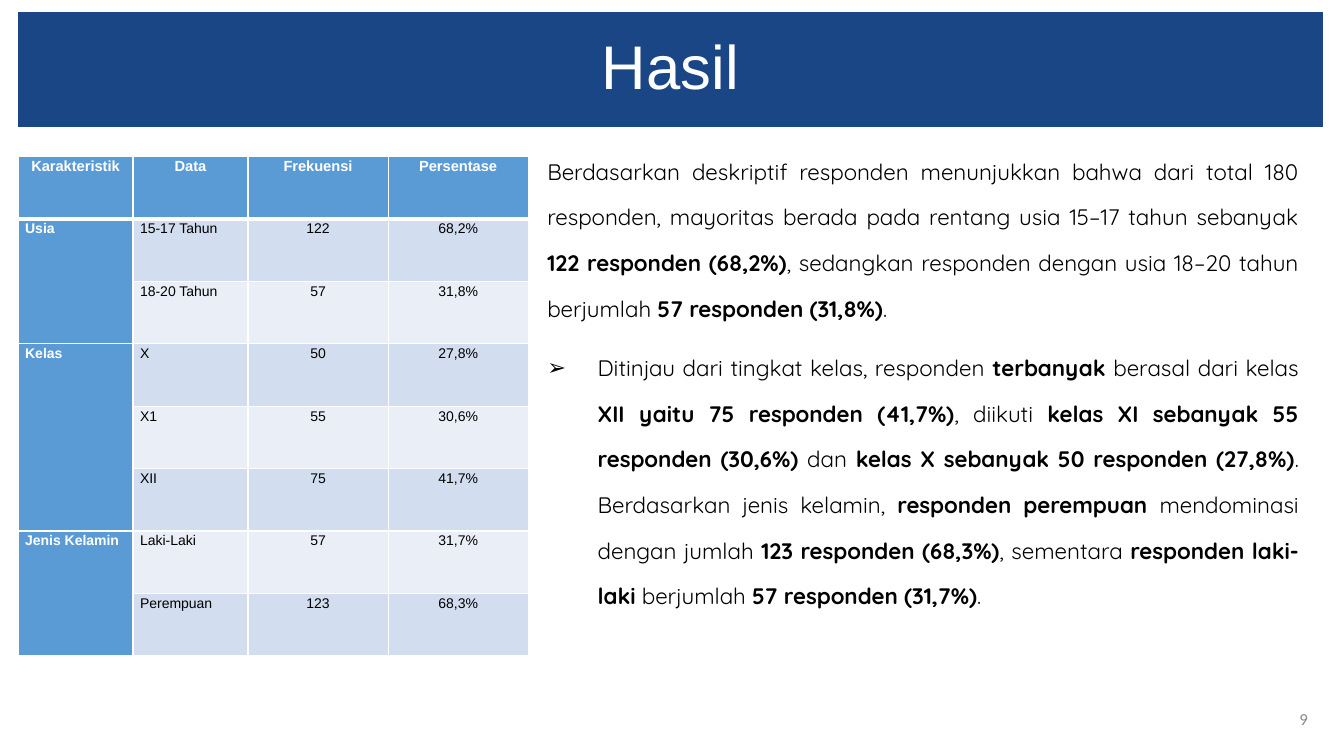
import pptx
import pptx.util
import pptx.dml.color
import pptx.enum.text
import pptx.oxml.ns
from lxml import etree
from pptx.util import Inches

COLORS = {
    "banner": "1B4685",
    "head": "5B9BD5",
    "odd": "D2DEEF",
    "even": "EAEFF7",
    "white": "FFFFFF",
    "black": "000000",
    "gray": "888888",
}
ALIGN = pptx.enum.text.PP_ALIGN
ANCHOR = pptx.enum.text.MSO_ANCHOR

COL_WIDTHS = [1.14, 1.14, 1.39, 1.39]
ROW_HEIGHT = 0.62
HEADER = ["Karakteristik", "Data", "Frekuensi", "Persentase"]
GROUPS = [
    ("Usia", [("15-17 Tahun", "122", "68,2%"), ("18-20 Tahun", "57", "31,8%")]),
    ("Kelas", [("X", "50", "27,8%"), ("X1", "55", "30,6%"), ("XII", "75", "41,7%")]),
    ("Jenis Kelamin", [("Laki-Laki", "57", "31,7%"), ("Perempuan", "123", "68,3%")]),
]
AGE_TEXT = (
    "Berdasarkan deskriptif responden menunjukkan bahwa dari total 180 responden, "
    "mayoritas berada pada rentang usia 15–17 tahun sebanyak **122 responden (68,2%)**, "
    "sedangkan responden dengan usia 18–20 tahun berjumlah **57 responden (31,8%)**."
)
CLASS_TEXT = (
    "Ditinjau dari tingkat kelas, responden **terbanyak** berasal dari kelas "
    "**XII yaitu 75 responden (41,7%)**, diikuti **kelas XI sebanyak 55 responden (30,6%)** "
    "dan **kelas X sebanyak 50 responden (27,8%)**. Berdasarkan jenis kelamin, "
    "**responden perempuan **mendominasi dengan jumlah **123 responden (68,3%)**, "
    "sementara **responden laki-laki **berjumlah **57 responden (31,7%)**."
)


def rgb(name):
    return pptx.dml.color.RGBColor.from_string(COLORS[name])


def add_text(p, text, size, font="Arial", color="black", bold=False,
             align=ALIGN.LEFT, spacing=1.0):
    """Fill a paragraph; parts between ** marks switch the weight."""
    p.alignment = align
    p.line_spacing = spacing
    for i, part in enumerate(text.split("**")):
        r = p.add_run()
        r.text = part
        r.font.size = pptx.util.Pt(size)
        r.font.name = font
        r.font.bold = bold != (i % 2 == 1)
        r.font.color.rgb = rgb(color)


def set_indent(p, left, first=0, bullet=None):
    pPr = p._p.get_or_add_pPr()
    pPr.set("marL", str(Inches(left)))
    pPr.set("indent", str(Inches(first)))
    if bullet:
        etree.SubElement(pPr, pptx.oxml.ns.qn("a:buFont")).set("typeface", "Arial")
        etree.SubElement(pPr, pptx.oxml.ns.qn("a:buChar")).set("char", bullet)
    else:
        etree.SubElement(pPr, pptx.oxml.ns.qn("a:buNone"))


def set_borders(cell, bottom=1):
    tcPr = cell._tc.get_or_add_tcPr()
    for side, width in zip("LRTB", (1, 1, 1, bottom)):
        ln = etree.SubElement(tcPr, pptx.oxml.ns.qn("a:ln" + side))
        ln.set("w", str(pptx.util.Pt(width)))
        fill = etree.SubElement(ln, pptx.oxml.ns.qn("a:solidFill"))
        etree.SubElement(fill, pptx.oxml.ns.qn("a:srgbClr")).set("val", COLORS["white"])


def fill_cell(cell, text, fill, bottom=1, size=10, **fmt):
    set_borders(cell, bottom)
    cell.fill.solid()
    cell.fill.fore_color.rgb = rgb(fill)
    cell.margin_left = cell.margin_right = Inches(0.07)
    cell.margin_top = cell.margin_bottom = 0
    cell.vertical_anchor = ANCHOR.TOP
    add_text(cell.text_frame.paragraphs[0], text, size, spacing=1.15, **fmt)


def add_title(s, text):
    title = s.shapes.title
    title.left, title.top = Inches(0.18), Inches(0.12)
    title.width, title.height = Inches(12.94), Inches(1.14)
    title.fill.solid()
    title.fill.fore_color.rgb = rgb("banner")
    title.text_frame.vertical_anchor = ANCHOR.MIDDLE
    add_text(title.text_frame.paragraphs[0], text, 44, color="white",
             align=ALIGN.CENTER, spacing=0.9)


def add_respondent_table(s):
    rows = 1 + sum(len(items) for _, items in GROUPS)
    table = s.shapes.add_table(rows, len(HEADER), Inches(0.18), Inches(1.55),
                               Inches(sum(COL_WIDTHS)), Inches(ROW_HEIGHT * rows)).table
    for col, width in zip(table.columns, COL_WIDTHS):
        col.width = Inches(width)
    for c, label in enumerate(HEADER):
        fill_cell(table.cell(0, c), label, "head", bottom=3, size=10.5,
                  color="white", bold=True, align=ALIGN.CENTER)
    row = 1
    for group, items in GROUPS:
        first = row
        for values in items:
            fill_cell(table.cell(row, 0), group if row == first else "", "head",
                      color="white", bold=True)
            for c, value in enumerate(values, 1):
                fill_cell(table.cell(row, c), value, "odd" if row % 2 else "even",
                          align=ALIGN.LEFT if c == 1 else ALIGN.CENTER)
            row += 1
        table.cell(first, 0).merge(table.cell(row - 1, 0))


def add_box(s, left, top, width, height):
    tf = s.shapes.add_textbox(Inches(left), Inches(top),
                              Inches(width), Inches(height)).text_frame
    tf.word_wrap = True
    return tf


def add_findings(s):
    tf = add_box(s, 5.08, 1.33, 7.9, 5.5)
    fmt = dict(size=16, font="Quicksand", align=ALIGN.JUSTIFY, spacing=1.7)
    p = tf.paragraphs[0]
    set_indent(p, 0.25)
    add_text(p, AGE_TEXT, **fmt)
    p = tf.add_paragraph()
    set_indent(p, 0.75, -0.5, bullet="➢")
    p.space_before = pptx.util.Pt(10)
    add_text(p, CLASS_TEXT, **fmt)


def add_page_number(s, number):
    tf = add_box(s, 12.5, 6.93, 0.57, 0.4)
    tf.vertical_anchor = ANCHOR.MIDDLE
    add_text(tf.paragraphs[0], number, 12, font="Calibri", color="gray", align=ALIGN.RIGHT)


def main():
    prs = pptx.Presentation()
    prs.slide_width, prs.slide_height = Inches(13.33), Inches(7.5)
    s = prs.slides.add_slide(prs.slide_layouts[5])
    add_title(s, "Hasil")
    add_respondent_table(s)
    add_findings(s)
    add_page_number(s, "9")
    prs.save("out.pptx")


if __name__ == "__main__":
    main()
